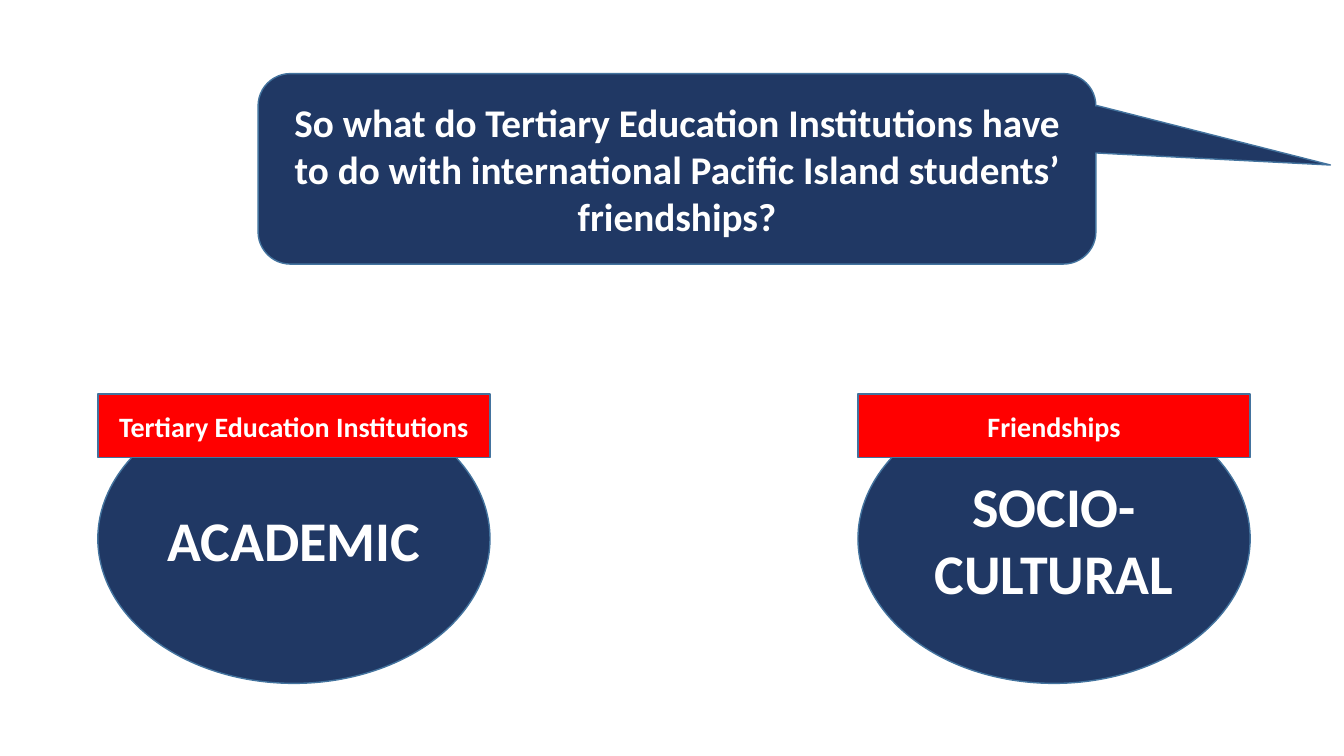
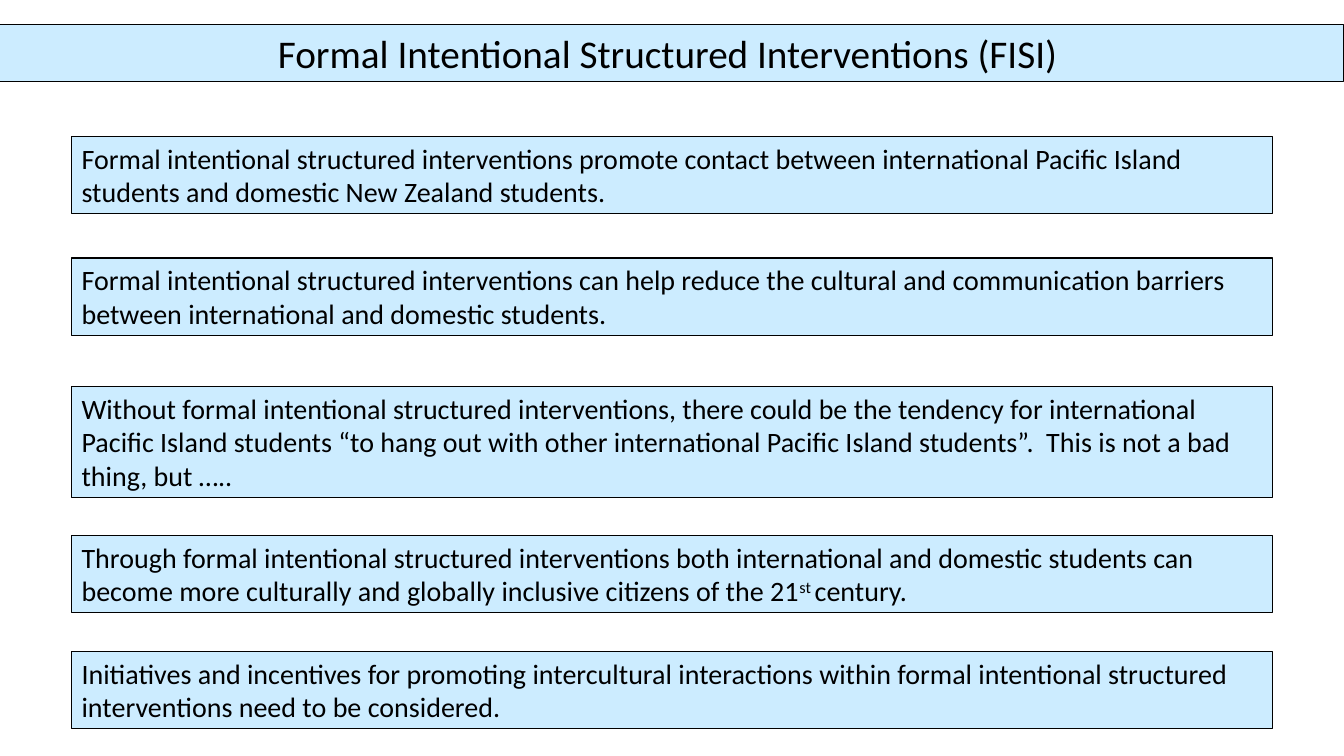
"""Builds two slides on institutions, friendships and structured interventions."""
import pptx
import pptx.dml.color
import pptx.enum.shapes
import pptx.enum.text
import pptx.util

RGBColor = pptx.dml.color.RGBColor
NAVY = RGBColor(0x20, 0x38, 0x64)
STEEL = RGBColor(0x43, 0x73, 0x9E)
RED = RGBColor(0xFF, 0x00, 0x00)
PALE_BLUE = RGBColor(0xCC, 0xEC, 0xFF)
WHITE = RGBColor(0xFF, 0xFF, 0xFF)
BLACK = RGBColor(0x00, 0x00, 0x00)

SHAPES = pptx.enum.shapes.MSO_SHAPE
ANCHOR = pptx.enum.text.MSO_ANCHOR
ALIGN = pptx.enum.text.PP_ALIGN
AUTO_SIZE = pptx.enum.text.MSO_AUTO_SIZE

BOLD_LOOK = {
    "line": STEEL,
    "line_width": 1,
    "font": {"name": "Calibri", "bold": True},
    "text_color": WHITE,
    "frame": {"word_wrap": True, "vertical_anchor": ANCHOR.MIDDLE},
}
PLAIN_LOOK = {
    "line": BLACK,
    "line_width": 0.75,
    "font": {"name": "Calibri", "bold": False},
    "text_color": BLACK,
    "frame": {
        "word_wrap": True,
        "vertical_anchor": ANCHOR.TOP,
        "auto_size": AUTO_SIZE.SHAPE_TO_FIT_TEXT,
    },
}

presentation = pptx.Presentation()
presentation.slide_width = pptx.util.Inches(13.33)
presentation.slide_height = pptx.util.Inches(7.5)
COLUMN = presentation.slide_width / 100
ROW = presentation.slide_height / 100
BLANK = presentation.slide_layouts[6]


def add_box(slide, kind, cell, fill, look, size, pieces, align=ALIGN.CENTER):
    """Add a filled shape on the grid; every second text piece is superscript."""
    left, top, width, height = cell
    shape = slide.shapes.add_shape(
        kind, round(left * COLUMN), round(top * ROW), round(width * COLUMN), round(height * ROW)
    )
    shape.shadow.inherit = False
    shape.fill.solid()
    shape.fill.fore_color.rgb = fill
    shape.line.color.rgb = look["line"]
    shape.line.width = pptx.util.Pt(look["line_width"])
    for name, value in look["frame"].items():
        setattr(shape.text_frame, name, value)
    paragraph = shape.text_frame.paragraphs[0]
    paragraph.alignment = align
    for index, piece in enumerate(pieces):
        run = paragraph.add_run()
        run.text = piece
        run.font.size = pptx.util.Pt(size)
        run.font.color.rgb = look["text_color"]
        for name, value in look["font"].items():
            setattr(run.font, name, value)
        if index % 2:
            run._r.get_or_add_rPr().set("baseline", "30000")
    return shape


question_slide = presentation.slides.add_slide(BLANK)
callout = add_box(
    question_slide, SHAPES.ROUNDED_RECTANGULAR_CALLOUT, (19.2, 9.73, 62.34, 25.2), NAVY, BOLD_LOOK, 28,
    ["So what do Tertiary Education Institutions have to do with "
     "international Pacific Island students’ friendships?"],
)
for index, value in enumerate((0.78, -0.02, 0.17)):
    callout.adjustments[index] = value

DOMAIN_TOP, DOMAIN_WIDTH = 52.13, 29.18
DOMAINS = [
    (7.28, "ACADEMIC", "Tertiary Education Institutions"),
    (63.84, "SOCIO-CULTURAL", "Friendships"),
]
for left, domain, label in DOMAINS:
    for kind, height, fill, size, text in (
        (SHAPES.OVAL, 38.27, NAVY, 40, domain),
        (SHAPES.RECTANGLE, 8.4, RED, 20, label),
    ):
        cell = (left, DOMAIN_TOP, DOMAIN_WIDTH, height)
        add_box(question_slide, kind, cell, fill, BOLD_LOOK, size, [text])

intervention_slide = presentation.slides.add_slide(BLANK)
add_box(
    intervention_slide, SHAPES.RECTANGLE, (0, 3.2, 100, 7.6), PALE_BLUE, PLAIN_LOOK, 28,
    ["Formal Intentional Structured Interventions (FISI) "],
)

MARGIN = 5.33
PADDING, LINE_HEIGHT = 1.27, 4.5
STATEMENTS = [
    (18, 2, ["Formal intentional structured interventions promote contact between international "
             "Pacific Island students and domestic New Zealand students."]),
    (34.13, 2, ["Formal intentional structured interventions can help reduce the cultural and "
                "communication barriers between international and domestic students."]),
    (51.07, 3, ["Without formal intentional structured interventions, there could be the tendency for "
                "international Pacific Island students “to hang out with other international Pacific "
                "Island students”.  This is not a bad thing, but ….."]),
    (70.8, 2, ["Through formal intentional structured interventions both international and domestic "
               "students can become more culturally and globally inclusive citizens of the 21",
               "st ", "century."]),
    (86.13, 2, ["Initiatives and incentives for promoting intercultural interactions within formal "
                "intentional structured interventions need to be considered."]),
]
for top, lines, pieces in STATEMENTS:
    cell = (MARGIN, top, 100 - 2 * MARGIN, PADDING + lines * LINE_HEIGHT)
    add_box(intervention_slide, SHAPES.RECTANGLE, cell, PALE_BLUE, PLAIN_LOOK, 20, pieces, ALIGN.LEFT)

presentation.save("out.pptx")
